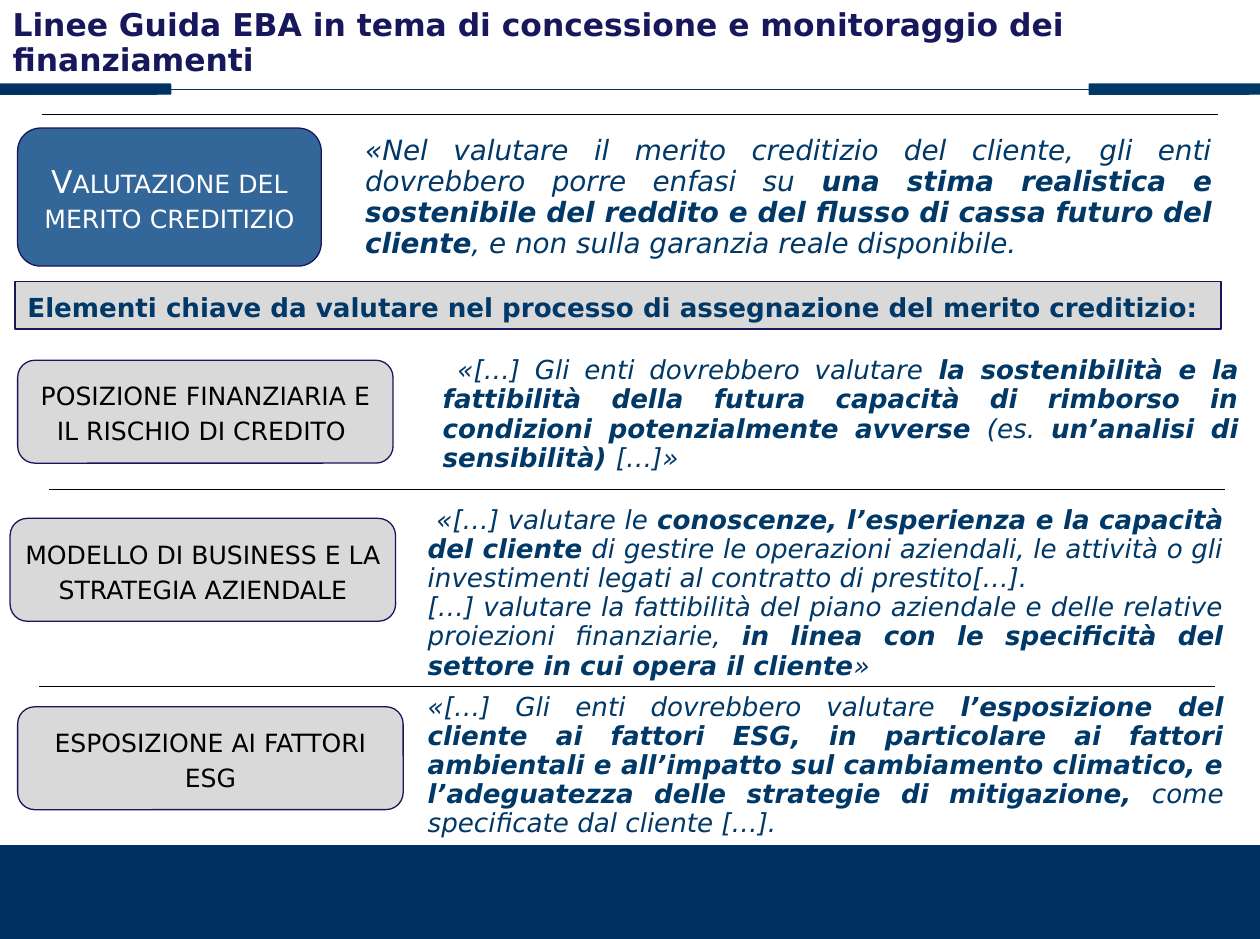
import pptx
import pptx.util
import pptx.dml.color
import pptx.enum.shapes
import pptx.enum.text
import pptx.oxml.ns
from lxml import etree

RGB = pptx.dml.color.RGBColor
SHAPE = pptx.enum.shapes.MSO_SHAPE
ALIGN = pptx.enum.text.PP_ALIGN
ANCHOR = pptx.enum.text.MSO_ANCHOR
FIT = pptx.enum.text.MSO_AUTO_SIZE

NAVY, BLUE, INK = RGB(0x00, 0x2F, 0x63), RGB(0x00, 0x38, 0x67), RGB(0x17, 0x17, 0x5C)
STEEL, GREY = RGB(0x33, 0x66, 0x99), RGB(0xD9, 0xD9, 0xD9)
WHITE, BLACK = RGB(0xFF, 0xFF, 0xFF), RGB(0, 0, 0)
FONT = "DejaVu Sans"

# Content: ** switches bold; places are percent of the slide (left, top, width, height)
TITLE = "Linee Guida EBA in tema di concessione e monitoraggio dei finanziamenti"
HEADER = "Elementi chiave da valutare nel processo di assegnazione del merito creditizio:"
INTRO_LABEL = "Valutazione del merito creditizio"
INTRO = ["«Nel valutare il merito creditizio del cliente, gli enti dovrebbero porre enfasi su "
         "**una stima realistica e sostenibile del reddito e del flusso di cassa futuro del "
         "cliente**, e non sulla garanzia reale disponibile."]
ELEMENTS = [
    ("posizione finanziaria e il rischio di credito ", (1.4, 38.37, 29.8),
     [" «[…] Gli enti dovrebbero valutare **la sostenibilità e la fattibilità della futura "
      "capacità di rimborso in condizioni potenzialmente avverse** (es. **un’analisi di "
      "sensibilità) **[…]»"], (34.16, 37.3, 65.14, 16.98)),
    ("modello di business e la strategia aziendale", (0.8, 55.21, 30.6),
     [" «[…] valutare le **conoscenze, l’esperienza e la capacità del cliente** di gestire le "
      "operazioni aziendali, le attività o gli investimenti legati al contratto di prestito[…].",
      "[…] valutare la fattibilità del piano aziendale e delle relative proiezioni finanziarie, "
      "**in linea con le specificità del settore in cui opera il cliente**»"],
     (32.97, 53.21, 65.14, 20.19)),
    ("esposizione ai fattori esg", (1.4, 75.27, 30.6),
     ["«[…] Gli enti dovrebbero valutare **l’esposizione del cliente ai fattori ESG, in "
      "particolare ai fattori ambientali e all’impatto sul cambiamento climatico, e "
      "l’adeguatezza delle strategie di mitigazione,** come specificate dal cliente […]."],
     (32.97, 73.13, 65.14, 16.98)),
]
CARD_HEIGHT = 10.96
DIVIDERS = [(3.3, 12.17), (3.9, 52.14), (3.1, 73.13)]
DIVIDER_WIDTH = 93.35

prs = pptx.Presentation()
prs.slide_width, prs.slide_height = pptx.util.Inches(10.04), pptx.util.Inches(7.48)
s = prs.slides.add_slide(prs.slide_layouts[5])


def place(*shares):
    sides = (prs.slide_width, prs.slide_height) * 2
    return [round(side * share / 100) for side, share in zip(sides, shares)]


def write(sp, paragraphs, size, color, align, bold=False, italic=False, small=False):
    tf = sp.text_frame
    tf.word_wrap = True
    for i, text in enumerate(paragraphs):
        p = tf.paragraphs[0] if i == 0 else tf.add_paragraph()
        p.alignment, p.line_spacing = align, 0.93
        p.space_before = pptx.util.Pt(0)
        for j, part in enumerate(text.split("**")):
            r = p.add_run()
            r.text = part
            r.font.name, r.font.size = FONT, pptx.util.Pt(size)
            r.font.color.rgb = color
            r.font.bold, r.font.italic = bold or j % 2 == 1, italic
            if small:
                r._r.get_or_add_rPr().set("cap", "small")


def add_block(kind, at, fill, line=None):
    sp = s.shapes.add_shape(kind, *place(*at))
    sp.shadow.inherit = False
    sp.fill.solid()
    sp.fill.fore_color.rgb = fill
    if line is None:
        sp.line.fill.background()
    else:
        sp.line.color.rgb, sp.line.width = line, pptx.util.Pt(0.75)
    return sp


def add_card(kind, at, fill, text, size, color, align, side, bottom, **style):
    sp = add_block(kind, at, fill, INK)
    tf = sp.text_frame
    tf.vertical_anchor = ANCHOR.MIDDLE
    tf.margin_left = tf.margin_right = pptx.util.Inches(side)
    tf.margin_top, tf.margin_bottom = pptx.util.Inches(0.1), pptx.util.Inches(bottom)
    write(sp, [text], size, color, align, **style)


def add_quote(paragraphs, at, size):
    sp = s.shapes.add_textbox(*place(*at))
    write(sp, paragraphs, size, BLUE, ALIGN.JUSTIFY, italic=True)
    sp.text_frame.auto_size = FIT.SHAPE_TO_FIT_TEXT


def add_rule(left, top, width, color):
    x, y, w = place(left, top, width)
    c = s.shapes.add_connector(pptx.enum.shapes.MSO_CONNECTOR.STRAIGHT, x, y, x + w, y)
    c.line.color.rgb, c.line.width = color, pptx.util.Pt(0.75)
    etree.SubElement(c._element.spPr, pptx.oxml.ns.qn("a:effectLst"))


# Frame: bottom band, header bars and rule
add_block(SHAPE.RECTANGLE, (0, 90, 100, 10), NAVY)
for left, fill in ((-0.2, NAVY), (86.45, BLUE)):
    add_block(SHAPE.ROUNDED_RECTANGLE, (left, 8.96, 13.75, 1.07), fill, BLUE).adjustments[0] = 0.02
add_rule(10.06, 9.5, 78.4, NAVY)

# Title
title = s.shapes.title
title.left, title.top, title.width, title.height = place(0, 0.27, 98.6, 8.82)
title.text_frame.vertical_anchor = ANCHOR.TOP
title.text_frame.auto_size = FIT.NONE
write(title, [TITLE], 18, INK, ALIGN.LEFT, bold=True)

# Introduction and header strip
add_card(SHAPE.ROUNDED_RECTANGLE, (1.4, 13.64, 24.1, 14.7), STEEL, INTRO_LABEL,
         18, WHITE, ALIGN.CENTER, 0.1, 0.05, small=True)
add_quote(INTRO, (28, 13.77, 69.2, 18.05), 16)
add_card(SHAPE.RECTANGLE, (1.2, 29.95, 95.7, 5.08), GREY, HEADER,
         15, BLUE, ALIGN.LEFT, 0.1, 0.05, bold=True)

# Key elements with their quotes
for label, card_at, quote, quote_at in ELEMENTS:
    add_card(SHAPE.ROUNDED_RECTANGLE, (*card_at, CARD_HEIGHT), GREY, label,
             18, BLACK, ALIGN.CENTER, 0.08, 0.08, small=True)
    add_quote(quote, quote_at, 15)

# Dividers
for left, top in DIVIDERS:
    add_rule(left, top, DIVIDER_WIDTH, BLACK)

prs.save("out.pptx")
